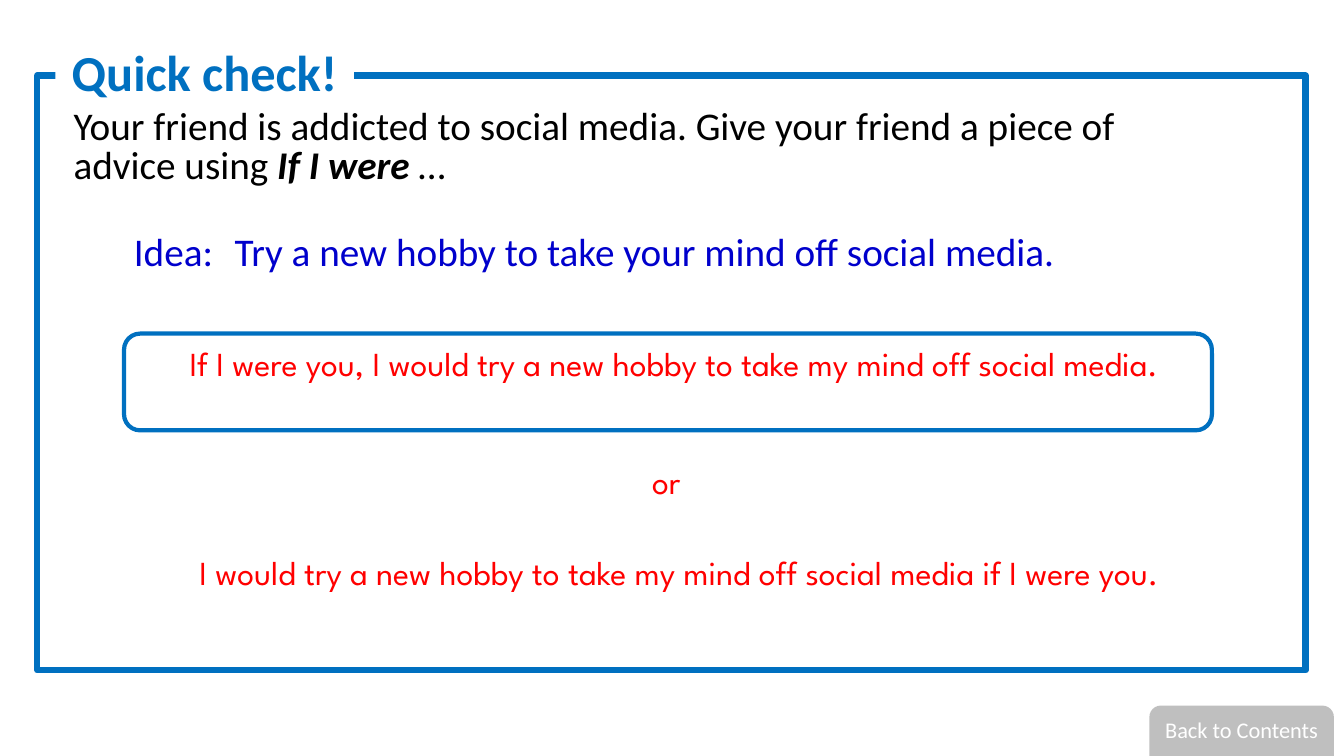
from pptx import Presentation
from pptx.dml.color import RGBColor
from pptx.enum.shapes import MSO_SHAPE
from pptx.enum.text import MSO_ANCHOR, MSO_AUTO_SIZE, PP_ALIGN
from pptx.util import Inches, Pt

RECTANGLE, ROUNDED = MSO_SHAPE.RECTANGLE, MSO_SHAPE.ROUNDED_RECTANGLE
LEFT, CENTER = PP_ALIGN.LEFT, PP_ALIGN.CENTER
TOP, MIDDLE = MSO_ANCHOR.TOP, MSO_ANCHOR.MIDDLE
GROW = MSO_AUTO_SIZE.SHAPE_TO_FIT_TEXT

BLUE, WHITE, GREY = "0070C0", "FFFFFF", "BFBFBF"
BLACK, IDEA_BLUE, RED = "000000", "0000CC", "FF0000"
NO_INSETS = (0, 0, 0, 0)
USUAL_INSETS = (0.1, 0.05, 0.1, 0.05)


def color(value):
    return RGBColor.from_string(value)


class SlideBuilder:
    body_font = "Calibri"
    answer_font = "League Spartan"

    def __init__(self, page):
        self.page = page

    def shape(self, kind, place, fill=None, line=None, line_width=0):
        box = self.page.shapes.add_shape(kind, *map(Inches, place))
        box.shadow.inherit = False
        if fill:
            box.fill.solid()
            box.fill.fore_color.rgb = color(fill)
        else:
            box.fill.background()
        if line:
            box.line.color.rgb = color(line)
            box.line.width = Pt(line_width)
        else:
            box.line.fill.background()
        return box

    def fill_text(self, box, spans, size, ink, font=body_font, align=LEFT, spacing=None,
                  insets=NO_INSETS, anchor=TOP, margin=0, indent=0):
        frame = box.text_frame
        frame.word_wrap = True
        frame.vertical_anchor = anchor
        for side, inset in zip(("left", "top", "right", "bottom"), insets):
            setattr(frame, f"margin_{side}", Inches(inset))
        para = frame.paragraphs[0]
        para.alignment = align
        if spacing:
            para.line_spacing = Pt(spacing)
        if margin:
            properties = para._p.get_or_add_pPr()
            properties.set("marL", str(Inches(margin)))
            properties.set("indent", str(Inches(indent)))
        for text, formats in spans:
            span = para.add_run()
            span.text = text
            values = {"name": font, "size": Pt(size), **formats}
            for name, value in values.items():
                setattr(span.font, name, value)
            span.font.color.rgb = color(ink)

    def text(self, place, spans, size, ink, grow=False, **layout):
        box = self.page.shapes.add_textbox(*map(Inches, place))
        self.fill_text(box, spans, size, ink, **layout)
        if grow:
            box.text_frame.auto_size = GROW

    def answer(self, place, text, **layout):
        self.text(place, [(text, {})], 24, RED, grow=True, font=self.answer_font,
                  spacing=27, margin=0.12, **layout)


def main():
    deck = Presentation()
    deck.slide_width, deck.slide_height = Inches(13.33), Inches(7.5)
    builder = SlideBuilder(deck.slides.add_slide(deck.slide_layouts[6]))

    # Frame with the title set into its top edge
    builder.shape(RECTANGLE, (0.37, 0.75, 12.58, 5.9), WHITE, BLUE, 4.5)
    title = builder.shape(RECTANGLE, (0.55, 0.42, 2.96, 0.63), WHITE)
    builder.fill_text(title, [("Quick check!", {"bold": True})], 36, BLUE, align=CENTER,
                      spacing=40, anchor=MIDDLE, margin=0.49, indent=-0.49)

    # Task and idea
    task = [
        ("Your friend is addicted to social media. Give your friend a piece of advice using ", {}),
        ("If I were ", {"bold": True, "italic": True}),
        ("…", {}),
    ]
    builder.text((0.73, 1.08, 11.39, 0.73), task, 28, BLACK, spacing=28)
    idea = [("Idea:\tTry a new hobby to take your mind off social media.", {})]
    builder.text((1.23, 2.23, 10.17, 0.55), idea, 28, IDEA_BLUE, grow=True,
                 spacing=32, insets=USUAL_INSETS)

    # Answers
    builder.shape(ROUNDED, (1.23, 3.31, 10.79, 0.96), line=BLUE, line_width=3)
    builder.answer((1.76, 3.43, 10.16, 0.76),
                   "If I were you, I would try a new hobby to take my mind off social media.")
    builder.answer((1.47, 4.6, 10.16, 0.76), "or", align=CENTER)
    builder.answer((1.76, 5.45, 9.87, 0.86),
                   "I would try a new hobby to take my mind off social media if I were you.",
                   insets=USUAL_INSETS)

    # Contents button
    button = builder.shape(ROUNDED, (11.4, 7, 1.83, 0.68), GREY)
    builder.fill_text(button, [("Back to Contents", {})], 16, WHITE, align=CENTER,
                      insets=(0.1, 0.07, 0.1, 0.05))

    deck.save("out.pptx")


if __name__ == "__main__":
    main()
